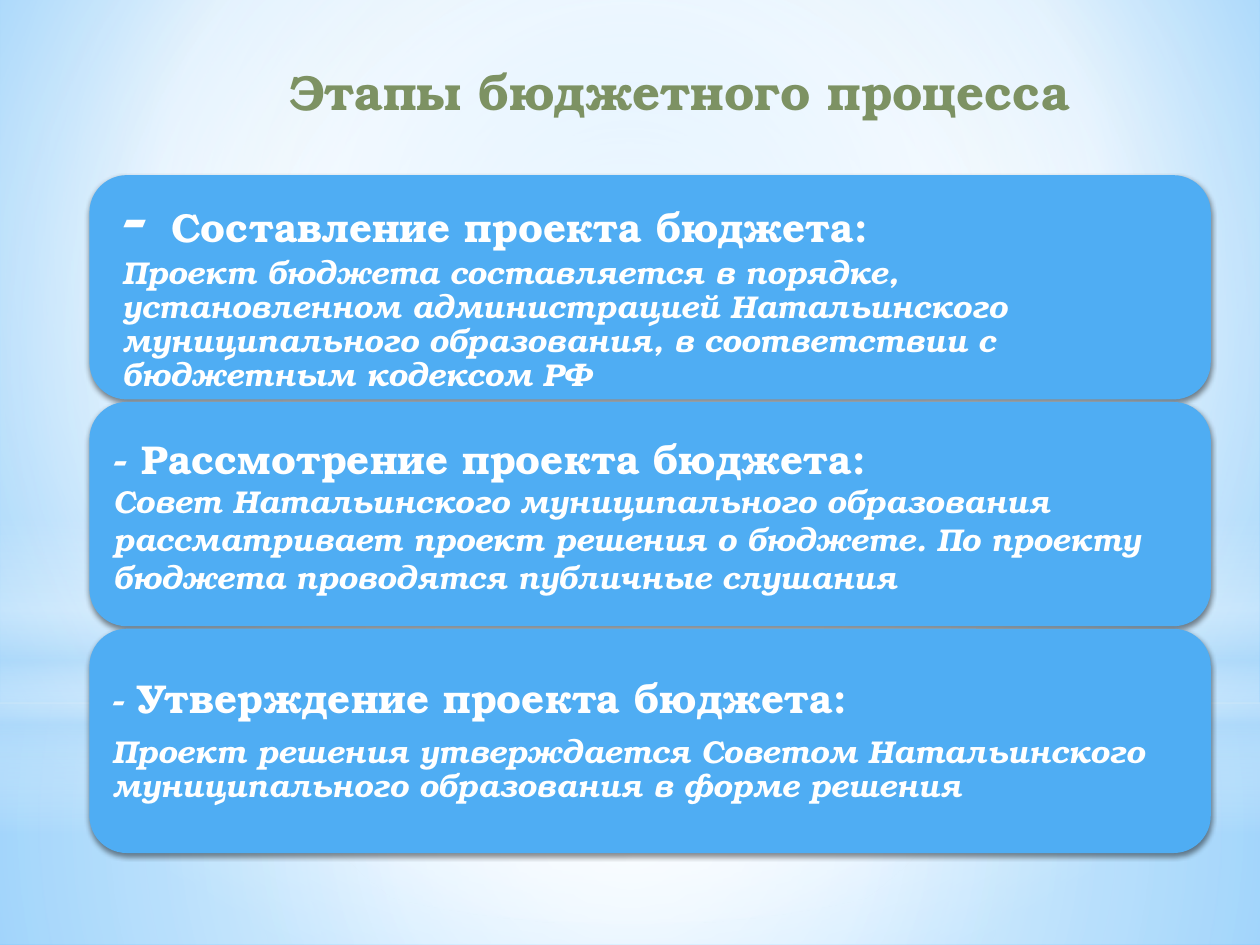
import pptx
import pptx.util
import pptx.dml.color
import pptx.enum.shapes
import pptx.enum.text
import pptx.oxml
import pptx.oxml.ns
from dataclasses import dataclass

Inches, Pt = pptx.util.Inches, pptx.util.Pt
SHAPE = pptx.enum.shapes.MSO_SHAPE
ANCHOR = pptx.enum.text.MSO_ANCHOR
ALIGN = pptx.enum.text.PP_ALIGN


@dataclass(frozen=True)
class Theme:
    font: str = "TeX Gyre Bonum"
    title: str = "7D9263"
    text: str = "FFFFFF"
    card: str = "4FADF3"
    pale: str = "B4DCFA"
    sky: str = "9ED5FF"
    edge: str = "5BB9FF"
    shadow: str = "000000"
    title_size: int = 28
    head_size: int = 23
    body_size: int = 18


T = Theme()
NS = pptx.oxml.ns.nsdecls("a")
CENTRE = '<a:path path="circle"><a:fillToRect l="50000" t="50000" r="50000" b="50000"/></a:path>'
HIGH = '<a:path path="circle"><a:fillToRect l="20000" t="10000" r="20000" b="60000"/></a:path>'
DOWN = '<a:lin ang="5400000" scaled="0"/>'


def set_gradient(owner, fill, stops, direction):
    """Give a fill stops of (position %, colour, opacity %)."""
    fill.solid()
    old = owner.find(".//" + pptx.oxml.ns.qn("a:solidFill"))
    gs = "".join(
        f'<a:gs pos="{pos * 1000}"><a:srgbClr val="{color}">'
        f'<a:alpha val="{opacity * 1000}"/></a:srgbClr></a:gs>'
        for pos, color, opacity in stops)
    old.getparent().replace(old, pptx.oxml.parse_xml(
        f'<a:gradFill {NS} rotWithShape="1"><a:gsLst>{gs}</a:gsLst>{direction}</a:gradFill>'))


def add_text(s, box, inset, anchor, paragraphs):
    """Add a text box from paragraphs of (format, [(text, font format)])."""
    tf = s.shapes.add_textbox(*map(Inches, box)).text_frame
    frame = dict(word_wrap=True, vertical_anchor=anchor)
    for side in ("left", "top", "right", "bottom"):
        frame["margin_" + side] = Inches(inset)
    for name, value in frame.items():
        setattr(tf, name, value)
    for i, (layout, runs) in enumerate(paragraphs):
        p = tf.add_paragraph() if i else tf.paragraphs[0]
        for name, value in layout.items():
            setattr(p, name, value)
        for text, look in runs:
            r = p.add_run()
            r.text = text
            look = dict(name=T.font, bold=True) | look
            color = look.pop("color", T.text)
            for name, value in look.items():
                setattr(r.font, name, value)
            r.font.color.rgb = pptx.dml.color.RGBColor.from_string(color)


prs = pptx.Presentation()
prs.slide_width, prs.slide_height = Inches(10), Inches(7.5)
s = prs.slides.add_slide(prs.slide_layouts[6])

# Sky background with soft light layers
bg_fill = s.background.fill
set_gradient(s._element, bg_fill,
             [(0, T.sky, 100), (60, "FFFFFF", 100), (100, T.edge, 100)], HIGH)
layers = [
    (SHAPE.RECTANGLE, 5.58, 1.92, CENTRE,
     [(0, "FFFFFF", 91), (37, "FFFFFF", 76), (100, T.pale, 79)]),
    (SHAPE.RECTANGLE, 0, 5.58, CENTRE,
     [(0, "FFFFFF", 89), (48, "FFFFFF", 62), (100, T.pale, 79)]),
    (SHAPE.RECTANGLE, 4.12, 2.5, DOWN,
     [(0, "FFFFFF", 0), (29, "FFFFFF", 30), (45, T.pale, 40),
      (55, "FFFFFF", 26), (65, T.pale, 60), (100, "FFFFFF", 0)]),
    (SHAPE.OVAL, 1.75, 5.58, CENTRE, [(0, "FFFFFF", 100), (56, "FFFFFF", 0)]),
]
for kind, top, height, direction, stops in layers:
    sp = s.shapes.add_shape(kind, 0, Inches(top), Inches(10), Inches(height))
    sp.shadow.inherit = False
    sp.line.fill.background()
    set_gradient(sp._element, sp.fill, stops, direction)

add_text(s, (1.77, 0.44, 6.77, 0.94), 0.05, ANCHOR.TOP, [
    (dict(alignment=ALIGN.RIGHT),
     [("Этапы бюджетного процесса", dict(size=Pt(T.title_size), color=T.title))])])

# Stages: inset, paragraph format, dash size, heading, description
stages = [
    (0.17, dict(line_spacing=0.9), 40, "Составление проекта бюджета:",
     "Проект бюджета составляется в порядке, установленном администрацией "
     "Натальинского муниципального образования, в соответствии с бюджетным кодексом РФ"),
    (0.1, {}, T.head_size, "Рассмотрение проекта бюджета:",
     "Совет Натальинского муниципального образования рассматривает проект решения "
     "о бюджете. По проекту бюджета проводятся публичные слушания"),
    (0.09, dict(line_spacing=0.9, space_after=Pt(8)), 21, "Утверждение проекта бюджета:",
     "Проект решения утверждается Советом Натальинского муниципального образования "
     "в форме решения"),
]
for i, (inset, layout, dash_size, heading, body) in enumerate(stages):
    top = 1.39 + 1.8 * i
    sp = s.shapes.add_shape(SHAPE.ROUNDED_RECTANGLE, Inches(0.71), Inches(top),
                            Inches(8.9), Inches(1.78))
    sp.shadow.inherit = False
    sp.line.fill.background()
    sp.fill.solid()
    sp.fill.fore_color.rgb = pptx.dml.color.RGBColor.from_string(T.card)
    effects = sp._element.spPr.find(pptx.oxml.ns.qn("a:effectLst"))
    effects.append(pptx.oxml.parse_xml(
        f'<a:outerShdw {NS} blurRad="{Pt(3.1)}" dist="{Pt(1.8)}" dir="5400000" '
        f'rotWithShape="0"><a:srgbClr val="{T.shadow}"><a:alpha val="45000"/>'
        f'</a:srgbClr></a:outerShdw>'))
    add_text(s, (0.8, top + 0.09, 8.72, 1.61), inset, ANCHOR.MIDDLE, [
        (layout, [("- ", dict(size=Pt(dash_size))),
                  (heading, dict(size=Pt(T.head_size)))]),
        (layout, [(body, dict(size=Pt(T.body_size), italic=True))])])

prs.save("out.pptx")
